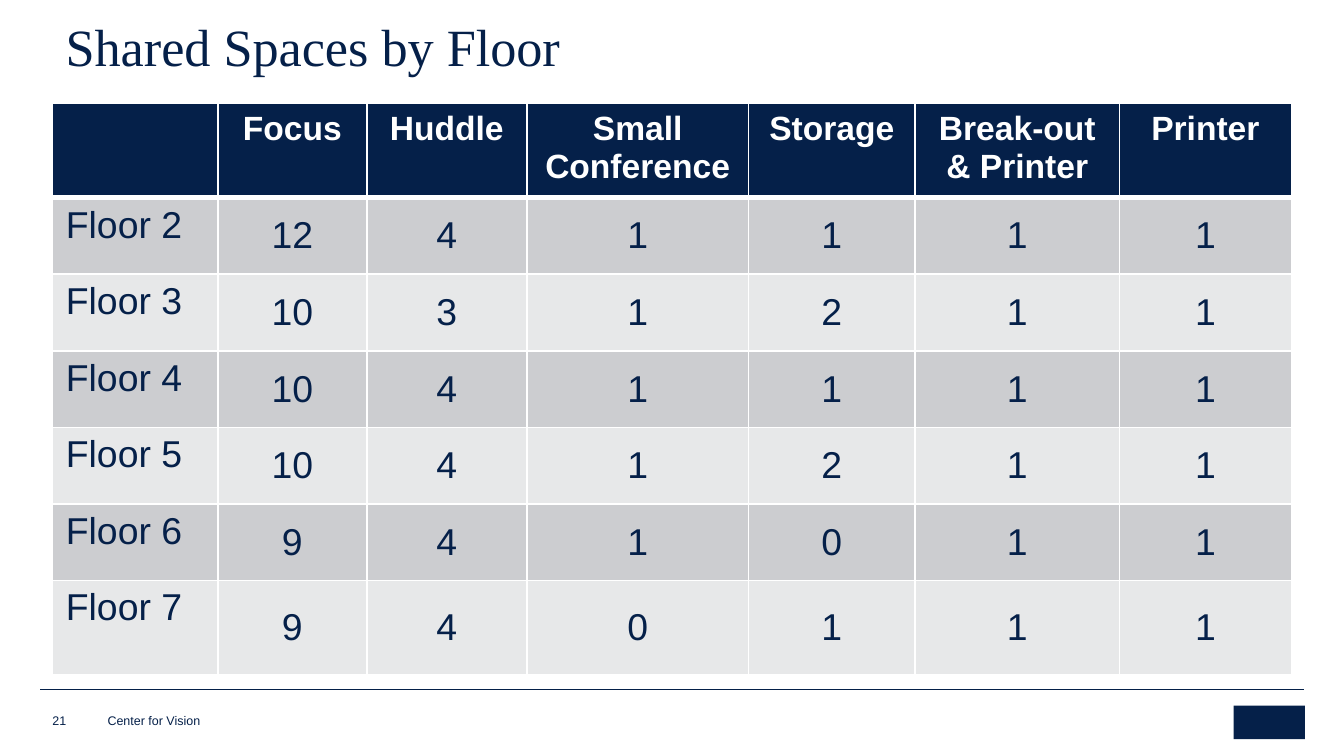
from lxml.etree import SubElement
from pptx import Presentation
from pptx.dml.color import RGBColor
from pptx.enum.shapes import MSO_CONNECTOR as Connector, MSO_SHAPE as Shape
from pptx.enum.text import MSO_ANCHOR as Anchor, MSO_AUTO_SIZE as AutoSize, PP_ALIGN as Align
from pptx.oxml.ns import qn
from pptx.util import Inches, Pt

NAVY, WHITE = "052049", "FFFFFF"
BANDS = ["CCCDD0", "E7E8E9"]
COLUMN_WIDTHS = [1.23, 1.11, 1.19, 1.65, 1.24, 1.52, 1.28]
ROW_HEIGHTS = [0.7] + [0.57] * 5 + [0.7]
HEADINGS = ["", "Focus", "Huddle", "Small Conference", "Storage", "Break-out & Printer", "Printer"]
FLOORS = [
    ["Floor 2", 12, 4, 1, 1, 1, 1],
    ["Floor 3", 10, 3, 1, 2, 1, 1],
    ["Floor 4", 10, 4, 1, 1, 1, 1],
    ["Floor 5", 10, 4, 1, 2, 1, 1],
    ["Floor 6", 9, 4, 1, 0, 1, 1],
    ["Floor 7", 9, 4, 0, 1, 1, 1],
]


def color(value):
    return RGBColor.from_string(value)


def set_font(paragraph, size, value, name="Arial", bold=False):
    font = paragraph.font
    font.name, font.size, font.bold = name, Pt(size), bold
    font.color.rgb = color(value)


def add_label(slide, text, left, top, width, height):
    label = slide.shapes.add_textbox(Inches(left), Inches(top), Inches(width), Inches(height))
    label.text_frame.word_wrap = True
    label.text_frame.text = text
    return label.text_frame


def add_title(slide, text, left, top, width, height):
    title = add_label(slide, text, left, top, width, height)
    title.auto_size = AutoSize.SHAPE_TO_FIT_TEXT
    title.paragraphs[0].line_spacing = 0.85
    set_font(title.paragraphs[0], 28, NAVY, "Times New Roman")


def set_borders(cell, widths):
    properties = cell._tc.get_or_add_tcPr()
    for side, width in widths.items():
        border = SubElement(properties, qn(f"a:ln{side}"), w=str(Pt(width)))
        SubElement(SubElement(border, qn("a:solidFill")), qn("a:srgbClr"), val=WHITE)


def fill_cell(cell, value, row, column):
    header = row == 0
    set_borders(cell, {"L": 1, "R": 1, "T": 3 if row == 1 else 1, "B": 3 if header else 1})
    cell.fill.solid()
    cell.fill.fore_color.rgb = color(NAVY if header else BANDS[(row - 1) % 2])
    cell.text = str(value)
    paragraph = cell.text_frame.paragraphs[0]
    set_font(paragraph, 18 if header else 20, WHITE if header else NAVY, bold=header)
    if column:
        paragraph.alignment = Align.CENTER
        cell.vertical_anchor = Anchor.TOP if header else Anchor.MIDDLE


def add_spaces_table(slide, left, top, width, height):
    rows = [HEADINGS] + FLOORS
    spaces = slide.shapes.add_table(
        len(rows), len(HEADINGS), Inches(left), Inches(top), Inches(width), Inches(height)
    ).table
    for column, column_width in zip(spaces.columns, COLUMN_WIDTHS):
        column.width = Inches(column_width)
    for row, row_height in zip(spaces.rows, ROW_HEIGHTS):
        row.height = Inches(row_height)
    for r, values in enumerate(rows):
        for c, value in enumerate(values):
            fill_cell(spaces.cell(r, c), value, r, c)


def add_footer(slide, left, top, width):
    rule = slide.shapes.add_connector(
        Connector.STRAIGHT, Inches(left), Inches(top), Inches(left + width), Inches(top)
    )
    rule.line.color.rgb = color(NAVY)
    rule.line.width = Pt(0.25)
    SubElement(rule._element.spPr, qn("a:effectLst"))

    for text, x, y, w, h in [("21", 0.09, 0.16, 0.27, 0.13),
                             ("Center for Vision", 0.5, 0.18, 4.71, 0.11)]:
        label = add_label(slide, text, left + x, top + y, w, h)
        label.margin_left = label.margin_right = label.margin_top = label.margin_bottom = 0
        label.vertical_anchor = Anchor.BOTTOM
        set_font(label.paragraphs[0], 6.75, NAVY)

    emblem = slide.shapes.add_shape(
        Shape.RECTANGLE, Inches(left + width - 0.52), Inches(top + 0.12), Inches(0.53), Inches(0.25)
    )
    emblem.shadow.inherit = False
    emblem.fill.solid()
    emblem.fill.fore_color.rgb = color(NAVY)
    emblem.line.fill.background()


def main():
    deck = Presentation()
    deck.slide_width = Inches(10)
    deck.slide_height = deck.slide_width * 9 // 16
    slide = deck.slides.add_slide(deck.slide_layouts[6])
    add_footer(slide, 0.3, 5.13, 9.4)
    add_title(slide, "Shared Spaces by Floor", 0.39, 0.13, 8.94, 0.51)
    add_spaces_table(slide, 0.39, 0.77, sum(COLUMN_WIDTHS), sum(ROW_HEIGHTS))
    deck.save("out.pptx")


if __name__ == "__main__":
    main()
